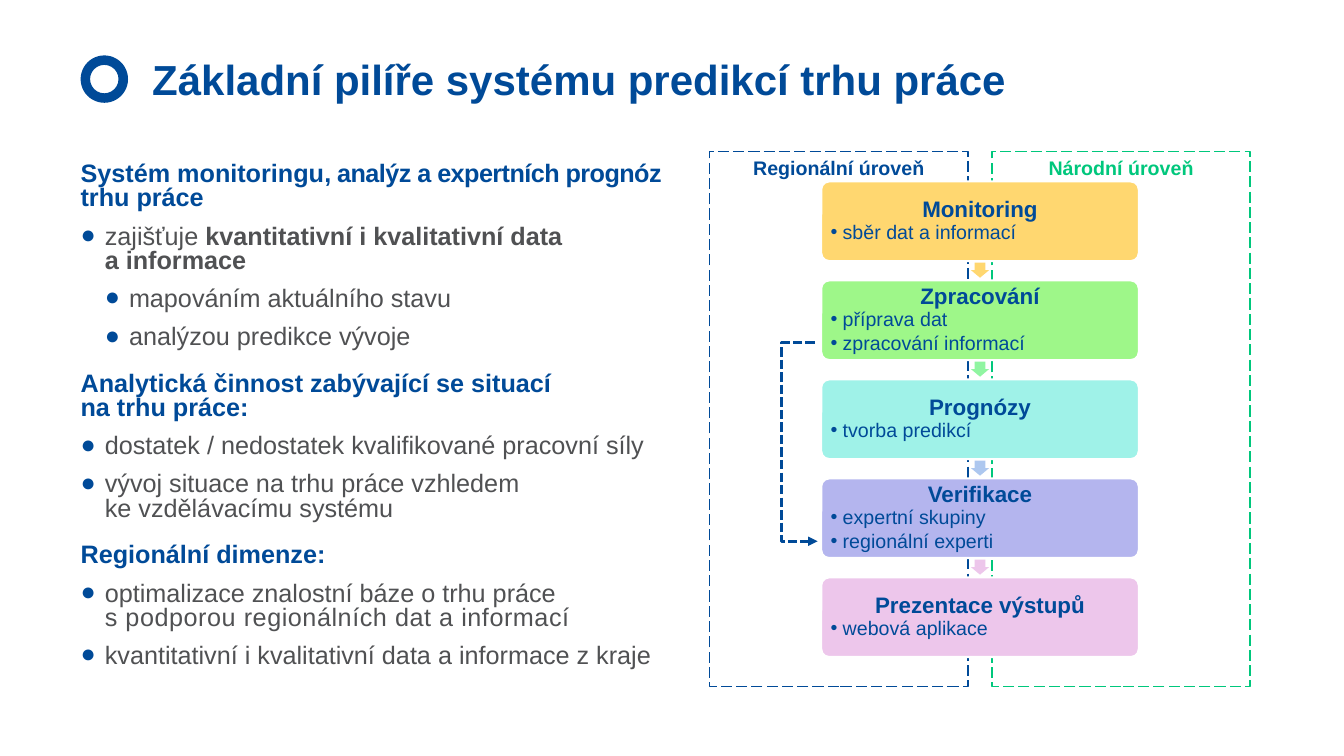
from lxml import etree
from pptx import Presentation
from pptx import util as u
from pptx.dml.color import RGBColor
from pptx.enum import dml, shapes, text
from pptx.oxml.ns import qn

COLORS = {
    "blue": "004A98", "green": "00C77C", "gray": "505153", "white": "FFFFFF",
    "gold": "FFD770", "lime": "9EF789", "mint": "90F5A1", "aqua": "9FF2E8",
    "sky": "ADC7EF", "violet": "B4B5EE", "pink": "EDC6EB",
}
KIND = shapes.MSO_SHAPE
ALIGN = text.PP_ALIGN
DASH = dml.MSO_LINE

# level (0 = heading), space after, runs as (words, bold, letter spacing)
BODY = [
    (0, 0, [("Systém monitoringu", True, 0),
            (", analýz a expertních prognóz ", True, -40),
            ("trhu práce", True, 0)]),
    (1, 0, [("zajišťuje", False, 0),
            (" kvantitativní i kvalitativní data \na informace", True, 0)]),
    (2, 0, [("mapováním aktuálního stavu", False, 0)]),
    (2, 6, [("analýzou predikce vývoje", False, 0)]),
    (0, 0, [("Analytická činnost zabývající se situací \nna trhu práce:", True, 0)]),
    (1, 0, [("dostatek / nedostatek kvalifikované pracovní síly", False, 0)]),
    (1, 6, [("vývoj situace na trhu práce vzhledem \nke vzdělávacímu systému", False, 0)]),
    (0, 0, [("Regionální dimenze:", True, 0)]),
    (1, 0, [("optimalizace znalostní báze o trhu práce \n", False, 0),
            ("s podporou regionálních dat a informací", False, 40)]),
    (1, 0, [("kvantitativní i kvalitativní data a informace z kraje", False, 0)]),
]

# heading, bullets, box colour, colour of the arrow below
STEPS = [
    ("Monitoring", ["sběr dat a informací"], "gold", "gold"),
    ("Zpracování", ["příprava dat", "zpracování informací"], "lime", "mint"),
    ("Prognózy", ["tvorba predikcí"], "aqua", "sky"),
    ("Verifikace", ["expertní skupiny", "regionální experti"], "violet", "pink"),
    ("Prezentace výstupů", ["webová aplikace"], "pink", None),
]

LEVELS = [("Národní úroveň", 9.84, "green"), ("Regionální úroveň", 7.04, "blue")]


def rgb(name):
    return RGBColor.from_string(COLORS[name])


def sub(parent, tag, **attrs):
    return etree.SubElement(parent, qn(tag), attrs)


class Deck:
    font = "Arial"

    def __init__(self, prs):
        self.slide = prs.slides.add_slide(prs.slide_layouts[6])

    def shape(self, kind, box, fill=None, line=None, width=1, dash=None):
        item = self.slide.shapes.add_shape(kind, *map(u.Inches, box))
        item.shadow.inherit = False
        if fill:
            item.fill.solid()
            item.fill.fore_color.rgb = rgb(fill)
        else:
            item.fill.background()
        if line:
            item.line.color.rgb = rgb(line)
            item.line.width = u.Pt(width)
            item.line.dash_style = dash
        else:
            item.line.fill.background()
        return item

    def box(self, box):
        return self.frame(self.slide.shapes.add_textbox(*map(u.Inches, box)))

    def frame(self, item, side=0, top=0, anchor=text.MSO_ANCHOR.TOP):
        """Set up the text frame of an item and return it."""
        frame = item.text_frame
        frame.word_wrap = True
        frame.vertical_anchor = anchor
        frame.margin_left = frame.margin_right = u.Inches(side)
        frame.margin_top = frame.margin_bottom = u.Inches(top)
        return frame

    def para(self, frame, first, align=ALIGN.LEFT, lead=1.0, before=0, after=0):
        para = frame.paragraphs[0] if first else frame.add_paragraph()
        para.alignment = align
        para.line_spacing = lead
        para.space_before, para.space_after = u.Pt(before), u.Pt(after)
        return para

    def bullet(self, para, sign, left, hang):
        props = para._p.get_or_add_pPr()
        props.set("marL", str(u.Inches(left)))
        props.set("indent", str(-u.Inches(hang)))
        sub(sub(props, "a:buClr"), "a:srgbClr", val=COLORS["blue"])
        sub(props, "a:buFont", typeface=self.font)
        sub(props, "a:buChar", char=sign)

    def run(self, para, words, size, color="blue", bold=True, space=0):
        """Add a run; a newline in the words becomes a line break."""
        for i, part in enumerate(words.split("\n")):
            if i:
                para.add_line_break()
            if not part:
                continue
            run = para.add_run()
            run.text = part
            run.font.name, run.font.size = self.font, u.Pt(size)
            run.font.bold = bold
            run.font.color.rgb = rgb(color)
            if space:
                run.font._element.set("spc", str(space))

    def elbow(self, start, end, bend, color):
        """Dashed arrow whose bend is a share of its width."""
        item = self.slide.shapes.add_connector(
            shapes.MSO_CONNECTOR.ELBOW, *map(u.Inches, start + end))
        item.line.color.rgb = rgb(color)
        item.line.width = u.Pt(2.25)
        item.line.dash_style = DASH.SQUARE_DOT
        sub(item.line._get_or_add_ln(), "a:tailEnd", type="triangle")
        props = item._element.spPr
        sub(props, "a:effectLst")
        guides = props.find(qn("a:prstGeom")).get_or_add_avLst()
        sub(guides, "a:gd", name="adj1", fmla=f"val {round(bend * 100000)}")


def head(deck):
    mark = deck.shape(KIND.DONUT, (0.8, 0.55, 0.47, 0.47), "blue")
    mark.adjustments[0] = 0.2
    frame = deck.box((1.51, 0.59, 11.02, 0.91))
    para = deck.para(frame, True, lead=0.9)
    deck.run(para, "Základní pilíře systému predikcí trhu práce", 30)


def body(deck):
    frame = deck.box((0.8, 1.62, 6.2, 5.43))
    for i, (level, after, runs) in enumerate(BODY):
        para = deck.para(frame, i == 0, lead=0.8, before=10, after=after)
        if level:
            deck.bullet(para, "●", 0.24 * level, 0.24)
        for words, bold, space in runs:
            deck.run(para, words, 18, "gray" if level else "blue", bold, space)


def chain(deck):
    for name, left, color in LEVELS:
        area = deck.shape(KIND.RECTANGLE, (left, 1.5, 2.56, 5.31),
                          line=color, dash=DASH.LONG_DASH)
        para = deck.para(deck.frame(area, 0.1, 0.05), True, ALIGN.CENTER)
        deck.run(para, name, 14, color)

    for i, (name, points, fill, arrow) in enumerate(STEPS):
        top = 1.8 + 0.982 * i
        step = deck.shape(KIND.ROUNDED_RECTANGLE, (8.145, top, 3.15, 0.79),
                          fill, "white", 1.5)
        step.adjustments[0] = 0.1
        frame = deck.frame(step, 0.07, 0.07, text.MSO_ANCHOR.MIDDLE)
        deck.run(deck.para(frame, True, ALIGN.CENTER, 0.9), name, 16)
        for point in points:
            para = deck.para(frame, False, lead=0.9, after=2)
            deck.bullet(para, "•", 0.12, 0.12)
            deck.run(para, point, 14, bold=False)
        if arrow:
            down = deck.shape(KIND.RIGHT_ARROW, (9.645, top + 0.79, 0.15, 0.18), arrow)
            down.rotation = 90
            down.adjustments[0] = 0.6

    deck.elbow((8.08, 3.4), (8.11, 5.37), -11, "blue")


def main():
    prs = Presentation()
    prs.slide_width, prs.slide_height = u.Inches(13.33), u.Inches(7.5)
    deck = Deck(prs)
    head(deck)
    body(deck)
    chain(deck)
    prs.save("out.pptx")


if __name__ == "__main__":
    main()
